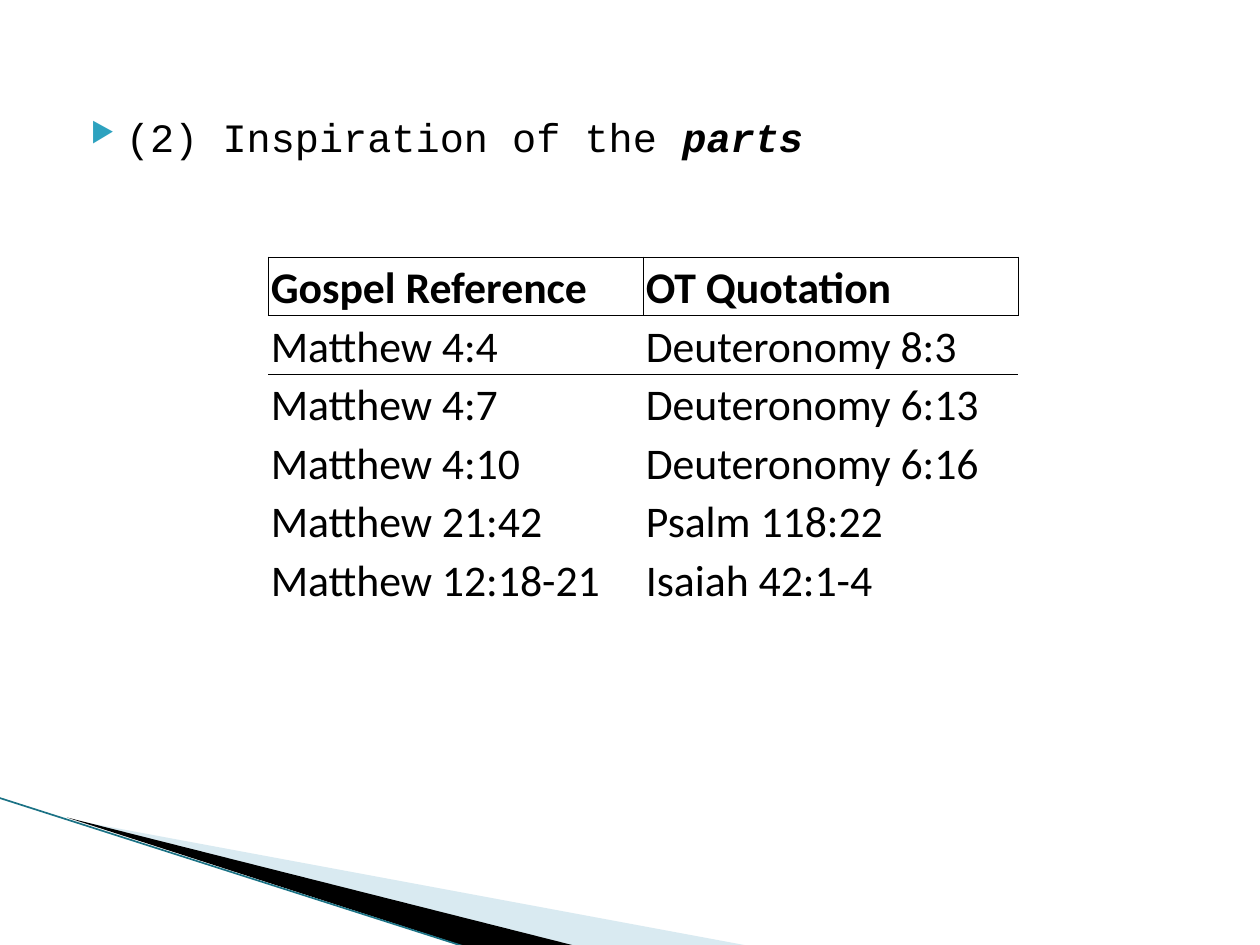
from lxml import etree
from pptx import Presentation
from pptx import util as u
from pptx.dml.color import RGBColor
from pptx.enum import shapes, text
from pptx.oxml import parse_xml
from pptx.oxml.ns import qn

# Content
HEADING = [("(2) Inspiration of the ", {}), ("parts", {"bold": True, "italic": True})]
QUOTATIONS = [
    ("Gospel Reference", "OT Quotation"),
    ("Matthew 4:4", "Deuteronomy 8:3"),
    ("Matthew 4:7", "Deuteronomy 6:13"),
    ("Matthew 4:10", "Deuteronomy 6:16"),
    ("Matthew 21:42", "Psalm 118:22"),
    ("Matthew 12:18-21", "Isaiah 42:1-4"),
]
# Corner wedges: outline in cm, colour key, opacity in percent
WEDGES = [
    ([(1.4, 16.52), (15.11, 19.07), (11.58, 19.07)], "pale", 40),
    ([(1.35, 16.48), (11.61, 19.07), (9.45, 19.1)], "ink", 100),
]
EDGE = [(-0.03, 16.08), (9.42, 19.1)]

THEME = {
    "ink": "000000", "pale": "A0CBDC", "edge": "1B7285", "bullet": "2DA2BF",
    "heading": {"name": "Courier New", "size": u.Pt(23)},
    "table": {"name": "Calibri", "size": u.Pt(25)},
}
COLUMN_WIDTH, ROW_HEIGHT = 7.56, 1.18
NO_STYLE_NO_GRID = "{2D5ABB26-0587-4C30-8999-92F81FD0307C}"
A = 'xmlns:a="http://schemas.openxmlformats.org/drawingml/2006/main"'


def colour(key):
    return RGBColor.from_string(THEME[key])


def apply(target, values):
    for name, value in values.items():
        setattr(target, name, value)


def set_font(font, role, **extra):
    apply(font, {**THEME[role], **extra})
    font.color.rgb = colour("ink")


def add_wedge(slide, points, fill, opacity):
    start, *rest = [(u.Cm(x), u.Cm(y)) for x, y in points]
    outline = slide.shapes.build_freeform(*start)
    outline.add_line_segments(rest)
    wedge = outline.convert_to_shape()
    wedge.shadow.inherit = False
    wedge.fill.solid()
    wedge.fill.fore_color.rgb = colour(fill)
    wedge.line.fill.background()
    if opacity < 100:
        tint = wedge.fill._xPr.find(".//" + qn("a:srgbClr"))
        etree.SubElement(tint, qn("a:alpha"), val=str(opacity * 1000))


def add_edge(slide):
    (x1, y1), (x2, y2) = EDGE
    edge = slide.shapes.add_connector(
        shapes.MSO_CONNECTOR.STRAIGHT, u.Cm(x1), u.Cm(y1), u.Cm(x2), u.Cm(y2))
    edge.line.color.rgb = colour("edge")
    edge.line.width = u.Pt(0.95)
    etree.SubElement(edge._element.spPr, qn("a:effectLst"))


def add_heading(slide):
    heading = slide.shapes.add_textbox(u.Cm(1.27), u.Cm(2.03), u.Cm(22.86), u.Cm(2.84))
    apply(heading.text_frame, {"word_wrap": True, "margin_top": u.Cm(0.23)})
    line = heading.text_frame.paragraphs[0]
    layout = line._p.get_or_add_pPr()
    layout.set("marL", str(u.Cm(1.02)))
    layout.set("indent", str(u.Cm(-0.71)))
    for bullet in (
        f'<a:buClr {A}><a:srgbClr val="{THEME["bullet"]}"/></a:buClr>',
        f'<a:buSzPct {A} val="68000"/>',
        f'<a:buChar {A} char="▶"/>',
    ):
        layout.append(parse_xml(bullet))
    for words, emphasis in HEADING:
        run = line.add_run()
        run.text = words
        set_font(run.font, "heading", **emphasis)


def add_borders(cell, sides):
    for side in sides:
        cell._tc.get_or_add_tcPr().append(parse_xml(
            f'<a:ln{side} {A} w="6350"><a:solidFill><a:srgbClr val="{THEME["ink"]}"/>'
            f'</a:solidFill></a:ln{side}>'))


def add_quotations(slide):
    rows, columns = len(QUOTATIONS), len(QUOTATIONS[0])
    table = slide.shapes.add_table(
        rows, columns, u.Cm(5.41), u.Cm(5.18),
        u.Cm(COLUMN_WIDTH * columns), u.Cm(ROW_HEIGHT * rows)).table
    apply(table, {"first_row": False, "horz_banding": False})
    table._tbl.tblPr.find(qn("a:tableStyleId")).text = NO_STYLE_NO_GRID
    for row in table.rows:
        row.height = u.Cm(ROW_HEIGHT)
    inset = u.Cm(0.05)
    for r, entries in enumerate(QUOTATIONS):
        for c, entry in enumerate(entries):
            cell = table.cell(r, c)
            cell.text = entry
            apply(cell, {
                "margin_left": inset, "margin_right": inset, "margin_top": inset,
                "margin_bottom": 0, "vertical_anchor": text.MSO_ANCHOR.BOTTOM})
            # Only the header row is ruled; the row below shares its line
            add_borders(cell, {0: "LRTB", 1: "T"}.get(r, ""))
            cell.fill.background()
            set_font(cell.text_frame.paragraphs[0].runs[0].font, "table", bold=r == 0)


def main():
    deck = Presentation()
    apply(deck, {"slide_width": u.Cm(25.4), "slide_height": u.Cm(19.05)})
    slide = deck.slides.add_slide(deck.slide_layouts[6])
    # Corner decoration
    for wedge in WEDGES:
        add_wedge(slide, *wedge)
    add_edge(slide)
    # Text and table
    add_heading(slide)
    add_quotations(slide)
    deck.save("out.pptx")


if __name__ == "__main__":
    main()
